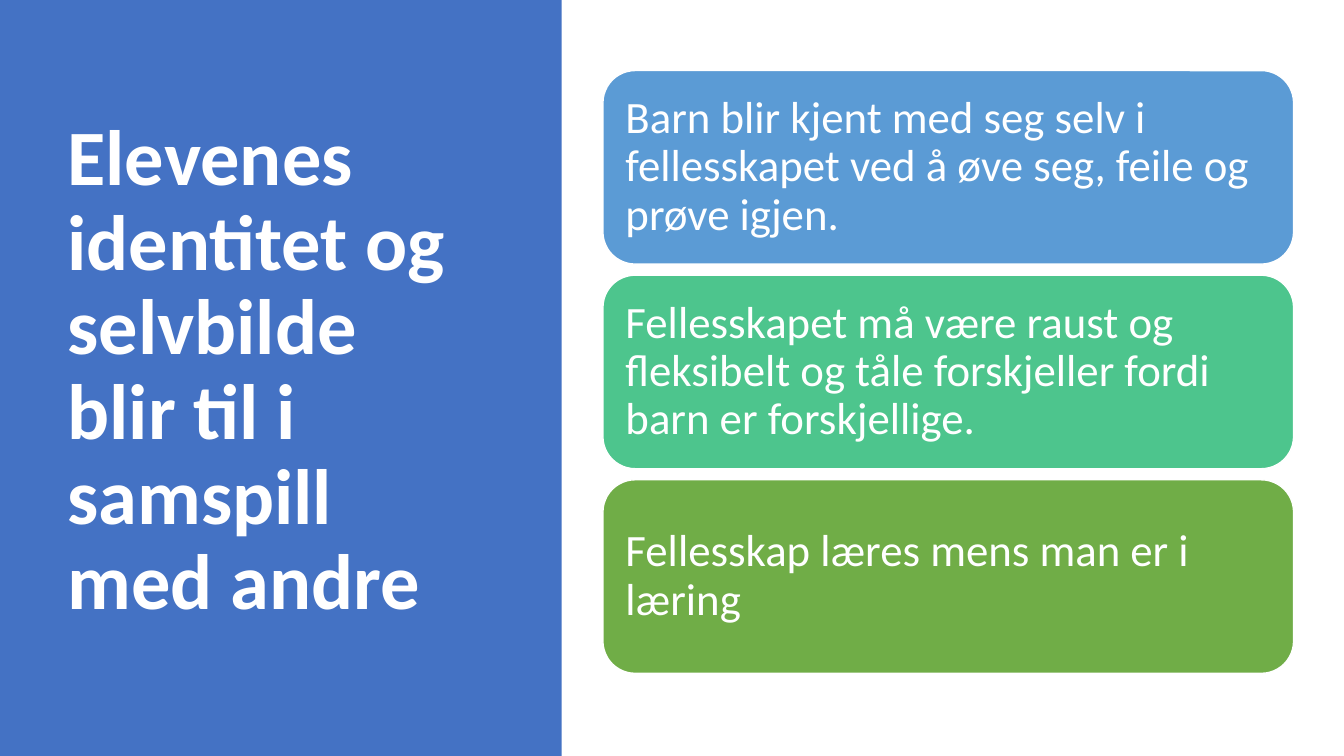
from dataclasses import dataclass

from pptx import Presentation
from pptx.dml.color import RGBColor as Rgb
from pptx.enum.shapes import MSO_SHAPE as Preset
from pptx.enum.text import MSO_ANCHOR as Anchor, MSO_AUTO_SIZE as AutoSize, PP_ALIGN as Align
from pptx.util import Inches, Pt


@dataclass(frozen=True)
class Theme:
    """Colours, font and type sizes of the slide."""
    font: str = "Calibri"
    light: str = "FFFFFF"
    panel: str = "4472C4"
    cards: tuple = ("5B9BD5", "4DC58D", "70AD47")
    title_size: int = 56
    card_size: int = 32


THEME = Theme()
WIDTH, HEIGHT = 13.33, 7.5
PANEL_WIDTH = 5.57
TITLE_BOX = (0.57, 0.68, 4.16, 6.02)
CARD_LEFT, CARD_TOP, CARD_WIDTH, CARD_HEIGHT = 5.98, 0.7, 6.85, 1.92
CARD_PITCH = 2.03
CARD_MARGIN = 0.13
HEADING = "Elevenes identitet og selvbilde blir til i samspill med andre"
STATEMENTS = (
    "Barn blir kjent med seg selv i fellesskapet ved å øve seg, feile og prøve igjen.",
    "Fellesskapet må være raust og fleksibelt og tåle forskjeller fordi barn er forskjellige.",
    "Fellesskap læres mens man er i læring",
)


def write(frame, words, size, bold=False):
    """Write one left-aligned, vertically centred paragraph."""
    frame.word_wrap = True
    frame.auto_size = AutoSize.NONE
    frame.vertical_anchor = Anchor.MIDDLE
    paragraph = frame.paragraphs[0]
    paragraph.alignment = Align.LEFT
    paragraph.line_spacing = 0.9
    run = paragraph.add_run()
    run.text = words
    run.font.name = THEME.font
    run.font.size = Pt(size)
    run.font.bold = bold
    run.font.color.rgb = Rgb.from_string(THEME.light)


def add_block(slide, preset, box, colour):
    """Add a flat filled shape without an outline."""
    block = slide.shapes.add_shape(preset, *map(Inches, box))
    block.shadow.inherit = False
    block.fill.solid()
    block.fill.fore_color.rgb = Rgb.from_string(colour)
    block.line.fill.background()
    return block


def add_heading(slide):
    """Set the title on the coloured side panel."""
    panel = add_block(slide, Preset.RECTANGLE, (0, 0, PANEL_WIDTH, HEIGHT), THEME.panel)
    heading = slide.shapes.title
    heading._element.addprevious(panel._element)
    heading.left, heading.top, heading.width, heading.height = map(Inches, TITLE_BOX)
    write(heading.text_frame, HEADING, THEME.title_size, bold=True)


def add_card(slide, row, statement, colour):
    """Add one rounded statement card in its row."""
    box = (CARD_LEFT, CARD_TOP + row * CARD_PITCH, CARD_WIDTH, CARD_HEIGHT)
    card = add_block(slide, Preset.ROUNDED_RECTANGLE, box, colour)
    card.line.color.rgb = Rgb.from_string(THEME.light)
    card.line.width = Pt(1)
    frame = card.text_frame
    frame.margin_left = frame.margin_right = Inches(CARD_MARGIN)
    frame.margin_top = frame.margin_bottom = Inches(CARD_MARGIN)
    write(frame, statement, THEME.card_size)


def main():
    """Build and save the slide."""
    deck = Presentation()
    deck.slide_width, deck.slide_height = Inches(WIDTH), Inches(HEIGHT)
    slide = deck.slides.add_slide(deck.slide_layouts.get_by_name("Title Only"))
    add_heading(slide)
    for row, (statement, colour) in enumerate(zip(STATEMENTS, THEME.cards)):
        add_card(slide, row, statement, colour)
    deck.save("out.pptx")


if __name__ == "__main__":
    main()
